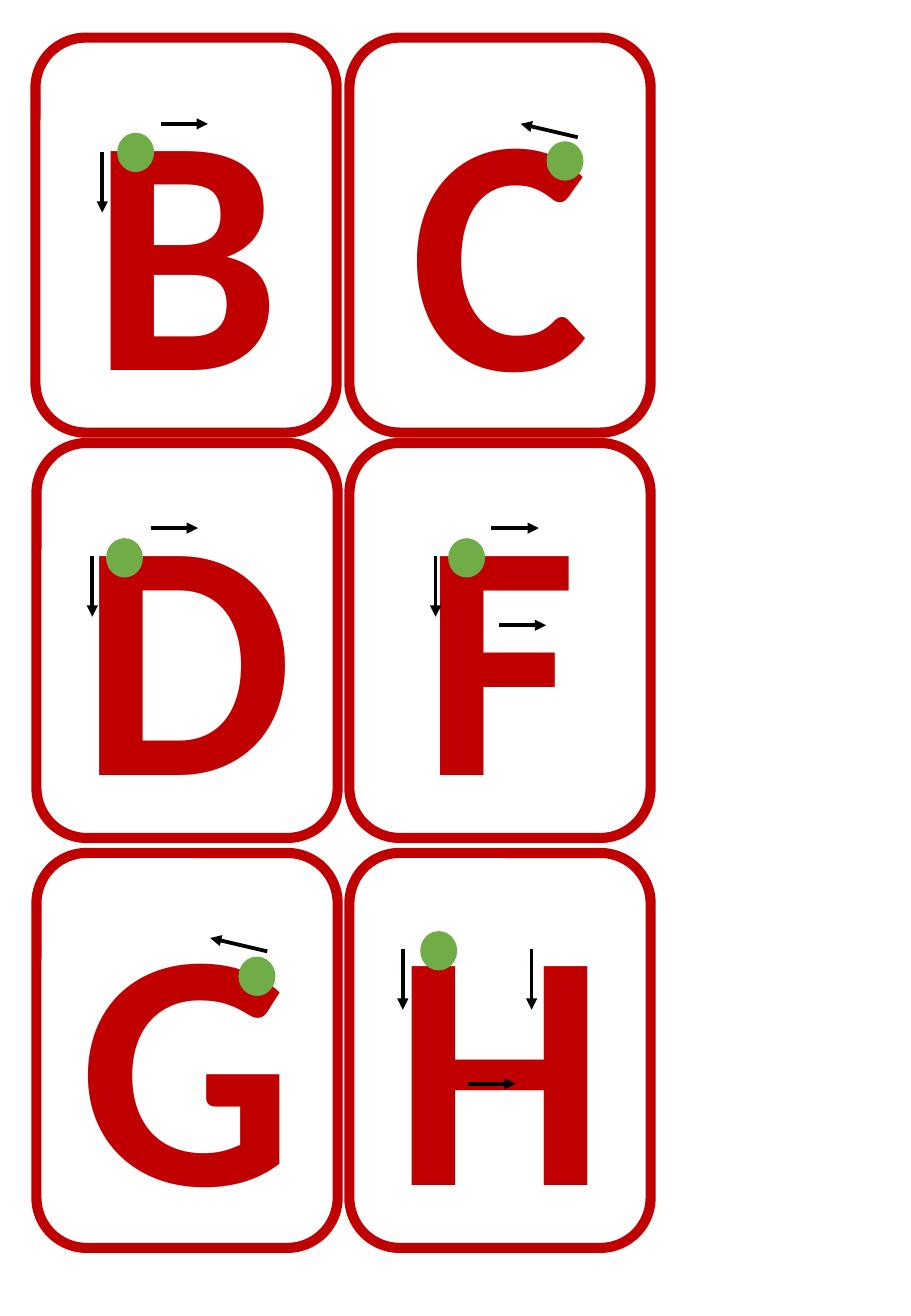
"""Build a sheet of letter cards with a start dot and stroke arrows on each."""
from lxml.etree import SubElement
from pptx import Presentation
from pptx.dml.color import RGBColor
from pptx.enum.shapes import MSO_CONNECTOR, MSO_SHAPE
from pptx.enum.text import MSO_ANCHOR, PP_ALIGN
from pptx.oxml.ns import qn
from pptx.util import Inches, Pt

RED, GREEN, BLACK = "C00000", "70AD47", "000000"
CARD, DOT = (2.48, 3.25), (0.29, 0.31)
STROKES = {"down": (0, 0.5), "right": (0.39, 0), "back": (-0.47, -0.11)}

# card corner in points; dot corner and arrow starts in inches from it
CARDS = [
    ("B", (21, 22.3), (0.68, 0.79), [("down", 0.55, 0.94),
                                     ("right", 1.03, 0.71)]),
    ("D", (21.6, 262.5), (0.58, 0.79), [("down", 0.46, 0.93),
                                        ("right", 0.94, 0.7)]),
    ("C", (207.1, 22.3), (1.63, 0.86), [("back", 1.88, 0.82)]),
    ("F", (207.1, 262.5), (0.82, 0.79), [("down", 0.71, 0.93),
                                         ("right", 1.17, 0.7),
                                         ("right", 1.23, 1.5)]),
    ("G", (21.6, 505.4), (1.67, 0.86), [("back", 1.9, 0.81)]),
    ("H", (207.1, 505.4), (0.59, 0.65), [("down", 0.44, 0.79),
                                         ("down", 1.5, 0.79),
                                         ("right", 0.98, 1.9)]),
]


def paint(part, color):
    part.rgb = RGBColor.from_string(color)


def add_form(slide, kind, x, y, size, color, width):
    form = slide.shapes.add_shape(kind, x, y, *map(Inches, size))
    form.shadow.inherit = False
    paint(form.line.color, color)
    form.line.width = Pt(width)
    return form


def add_card(slide, letter, x, y):
    card = add_form(slide, MSO_SHAPE.ROUNDED_RECTANGLE, x, y, CARD, RED, 6)
    card.fill.background()
    frame = card.text_frame
    frame.text = letter
    frame.vertical_anchor = MSO_ANCHOR.MIDDLE
    line = frame.paragraphs[0]
    line.alignment = PP_ALIGN.CENTER
    font = line.runs[0].font
    font.name, font.size, font.bold = "Calibri", Pt(200), True
    paint(font.color, RED)


def add_dot(slide, x, y):
    dot = add_form(slide, MSO_SHAPE.OVAL, x, y, DOT, GREEN, 1)
    dot.fill.solid()
    paint(dot.fill.fore_color, GREEN)


def add_arrow(slide, stroke, x, y):
    dx, dy = map(Inches, STROKES[stroke])
    arrow = slide.shapes.add_connector(
        MSO_CONNECTOR.STRAIGHT, x, y, x + dx, y + dy)
    paint(arrow.line.color, BLACK)
    arrow.line.width = Pt(2.25)
    SubElement(arrow.line._get_or_add_ln(), qn("a:tailEnd"), type="triangle")
    SubElement(arrow._element.spPr, qn("a:effectLst"))


def main():
    deck = Presentation()
    deck.slide_width, deck.slide_height = Inches(7.5), Inches(10.83)
    slide = deck.slides.add_slide(deck.slide_layouts[6])
    for letter, corner, _, _ in CARDS:
        add_card(slide, letter, *map(Pt, corner))
    for _, corner, (dx, dy), arrows in CARDS:
        x, y = map(Pt, corner)
        add_dot(slide, x + Inches(dx), y + Inches(dy))
        for stroke, ax, ay in arrows:
            add_arrow(slide, stroke, x + Inches(ax), y + Inches(ay))
    deck.save("out.pptx")


if __name__ == "__main__":
    main()
